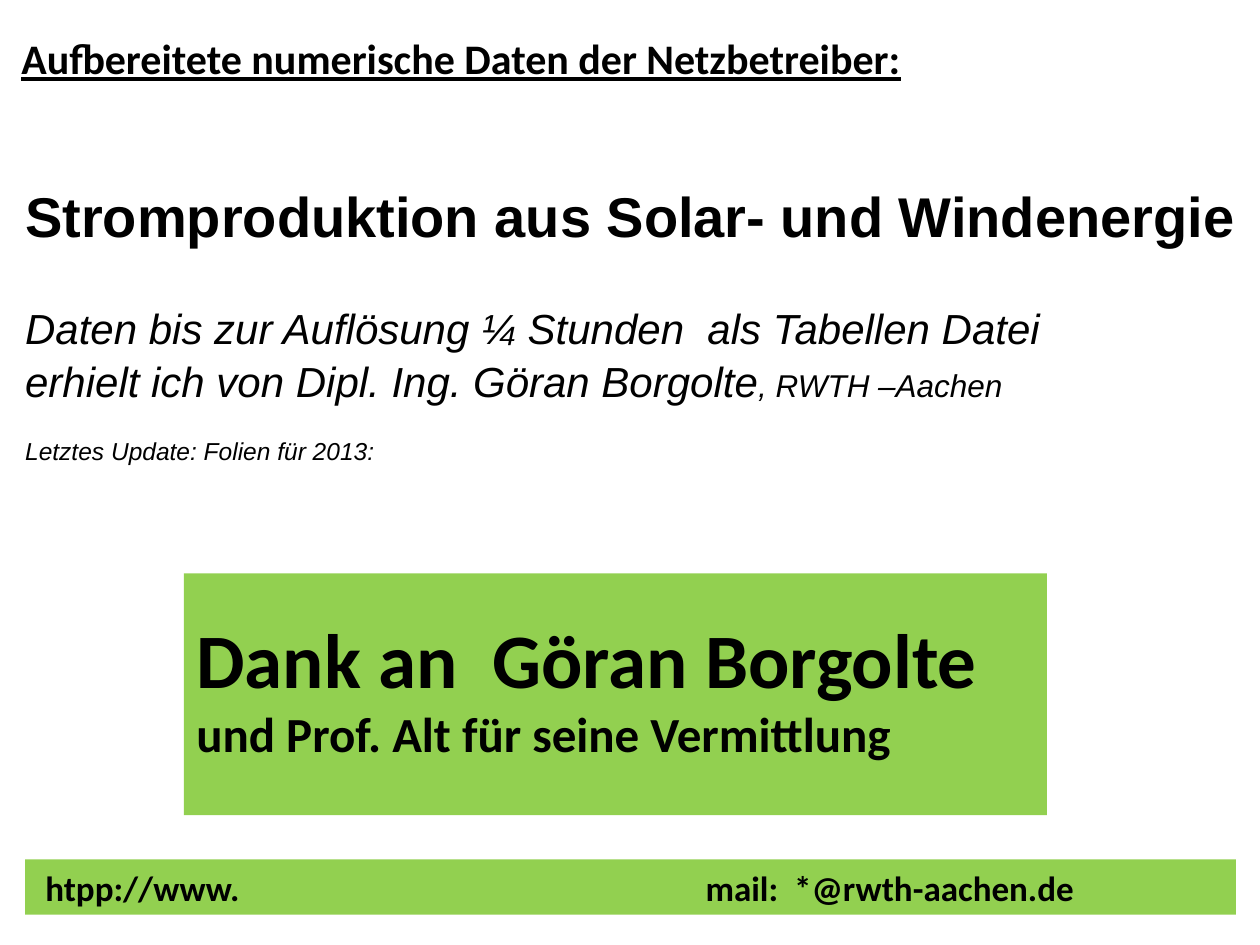
from pptx import Presentation
from pptx.dml.color import RGBColor
from pptx.enum.shapes import MSO_SHAPE
from pptx.enum.text import MSO_ANCHOR, MSO_AUTO_SIZE, PP_ALIGN
from pptx.oxml import parse_xml
from pptx.oxml.ns import nsdecls
from pptx.util import Inches, Pt

GREEN = RGBColor(0x92, 0xD0, 0x50)
BLACK = RGBColor(0, 0, 0)
RECT = MSO_SHAPE.RECTANGLE
TOP, MIDDLE = MSO_ANCHOR.TOP, MSO_ANCHOR.MIDDLE
LEFT = PP_ALIGN.LEFT
NO_FIT = MSO_AUTO_SIZE.NONE
MARGIN = 0.2


def set_values(target, values):
    """Set the attributes of an object from a dict."""
    for name, value in values.items():
        setattr(target, name, value)


def set_frame(sp, anchor=TOP, wrap=True, insets=(0.1, 0.05, 0.1, 0.05)):
    """Set the anchor, wrapping and insets of a text frame."""
    tf = sp.text_frame
    names = ("margin_left", "margin_top", "margin_right", "margin_bottom")
    set_values(tf, dict(zip(names, map(Inches, insets))))
    set_values(tf, {"vertical_anchor": anchor, "word_wrap": wrap, "auto_size": NO_FIT})
    return tf


def write(tf, paragraphs, font, **style):
    """Write paragraphs given as a space before and a list of (text, size, format)."""
    for i, (space, runs) in enumerate(paragraphs):
        p = tf.paragraphs[0] if i == 0 else tf.add_paragraph()
        set_values(p, {"alignment": LEFT, "space_before": Pt(space), "line_spacing": 1.0})
        for text, size, extra in runs:
            r = p.add_run()
            r.text = text
            set_values(r.font, {"name": font, "size": Pt(size), **style, **extra})
            r.font.color.rgb = BLACK


def add_panel(slide, box):
    """Add a plain green rectangle."""
    sp = slide.shapes.add_shape(RECT, *map(Inches, box))
    sp.shadow.inherit = False
    sp.fill.solid()
    sp.fill.fore_color.rgb = GREEN
    sp.line.fill.background()
    return sp


def add_heading(slide):
    """Place the underlined heading in the title placeholder."""
    sp = slide.shapes.title
    box = map(Inches, (0.07, 0.21, 7.49, 0.5))
    set_values(sp, dict(zip(("left", "top", "width", "height"), box)))
    tf = set_frame(sp, wrap=False)
    write(tf, [(0, [("Aufbereitete numerische Daten der Netzbetreiber:", 24, {})])],
          "Calibri", bold=True, underline=True)


def add_source(slide):
    """Add the topic and the origin of the data."""
    sp = slide.shapes.add_textbox(*map(Inches, (MARGIN, 1.39, 9.77, 2.52)))
    tf = set_frame(sp, wrap=False, insets=(0, 0.05, 0, 0))
    write(tf, [
        (0, [("Stromproduktion aus Solar- und Windenergie", 32,
              {"bold": True, "italic": False})]),
        (31, [("Daten bis zur Auflösung ¼ Stunden  als Tabellen Datei", 24, {})]),
        (1.5, [("erhielt ich von Dipl. Ing. Göran Borgolte", 24, {}),
               (", RWTH –Aachen", 18, {})]),
        (17, [("Letztes Update: Folien für 2013:", 14, {})]),
    ], "Arial", italic=True)


def add_thanks(slide):
    """Add the green panel with the thanks."""
    sp = add_panel(slide, (1.46, 4.55, 6.85, 1.92))
    tf = set_frame(sp, insets=(0.1, 0.3, 0.1, 0.05))
    write(tf, [
        (0, [("Dank an  Göran Borgolte", 44, {})]),
        (0, [("und Prof. Alt für seine Vermittlung", 28, {})]),
    ], "Calibri", bold=True)


def add_contact(slide):
    """Add the contact bar, with a tab stop before the mail address."""
    sp = add_panel(slide, (MARGIN, 6.82, 9.61, 0.44))
    tf = set_frame(sp, MIDDLE, insets=(0.16, 0.05, 0.1, 0.05))
    write(tf, [(0, [("htpp://www.\tmail:  *@rwth-aachen.de", 20, {})])],
          "Calibri", bold=True)
    tabs = f'<a:tabLst {nsdecls("a")}><a:tab pos="{Inches(5.24)}" algn="l"/></a:tabLst>'
    tf.paragraphs[0]._p.get_or_add_pPr().append(parse_xml(tabs))


def main():
    """Build the slide and save it."""
    prs = Presentation()
    set_values(prs, {"slide_width": Inches(10), "slide_height": Inches(7.5)})
    slide = prs.slides.add_slide(prs.slide_layouts[5])
    for add in (add_heading, add_source, add_thanks, add_contact):
        add(slide)
    prs.save("out.pptx")


if __name__ == "__main__":
    main()
